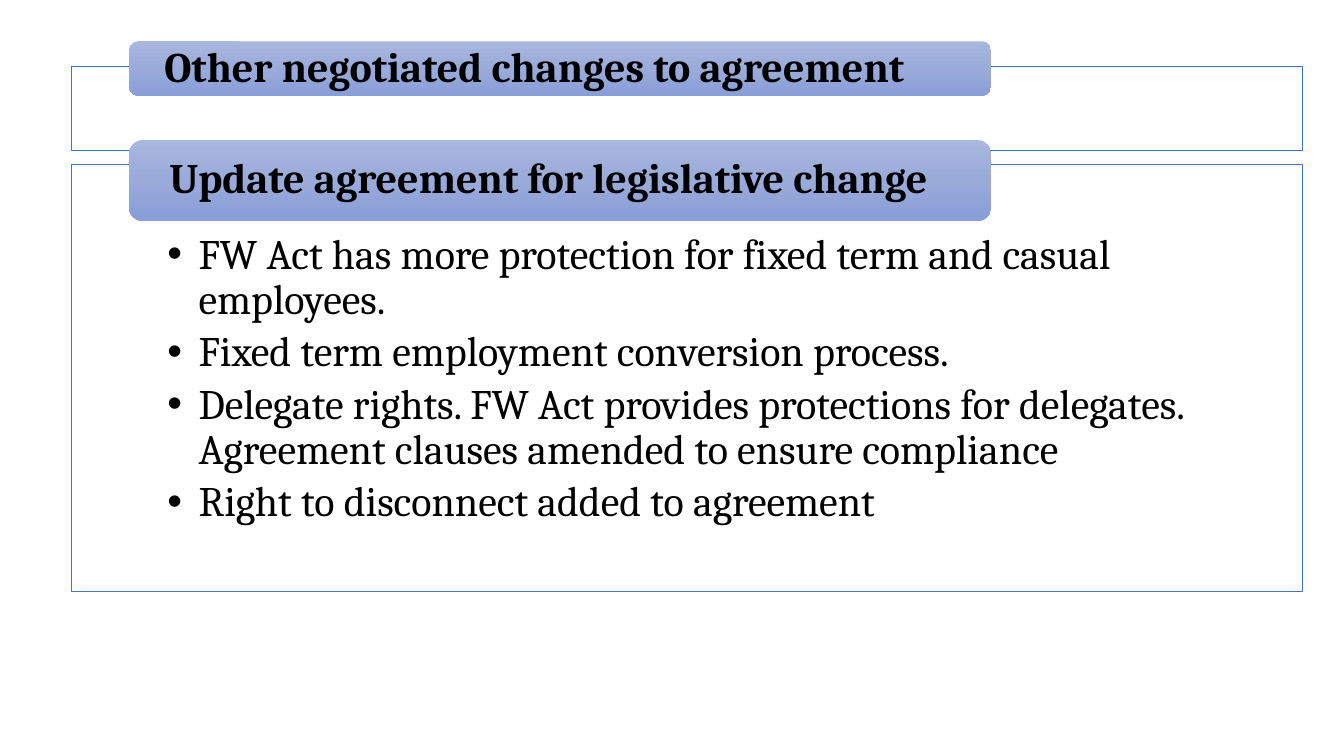
from copy import deepcopy
from dataclasses import dataclass

from pptx import Presentation
from pptx.dml.color import RGBColor
from pptx.enum.shapes import MSO_SHAPE
from pptx.enum.text import MSO_ANCHOR, MSO_AUTO_SIZE, PP_ALIGN
from pptx.oxml.ns import qn
from pptx.util import Inches, Pt

RECTANGLE = MSO_SHAPE.RECTANGLE
ROUNDED = MSO_SHAPE.ROUNDED_RECTANGLE
TOP, MIDDLE = MSO_ANCHOR.TOP, MSO_ANCHOR.MIDDLE
LEFT = PP_ALIGN.LEFT
NO_FIT = MSO_AUTO_SIZE.NONE

BAR_STOPS = [(0, "A8B7DF"), (0.5, "9AABD9"), (1, "889ED7")]
HANGING = 0.31


@dataclass
class Area:
    left: float
    top: float
    width: float
    height: float

    def lengths(self) -> list:
        return [Inches(n) for n in (self.left, self.top, self.width, self.height)]


@dataclass
class TextStyle:
    anchor: MSO_ANCHOR
    margins: tuple[float, float, float, float]
    bold: bool
    space_after: float
    bulleted: bool


TITLE_STYLE = TextStyle(MIDDLE, (0.32, 0, 0.32, 0), True, 0, False)
HEADING_STYLE = TextStyle(MIDDLE, (0.36, 0, 0.36, 0), True, 0, False)
LIST_STYLE = TextStyle(TOP, (0.95, 0.68, 0.95, 0.23), False, 5, True)

TITLE_FRAME = Area(0.71, 0.66, 12.21, 0.83)
TITLE_BAR = Area(1.28, 0.41, 8.55, 0.54)
TITLE_TEXT = Area(1.31, 0.44, 8.49, 0.48)
LIST_FRAME = Area(0.71, 1.63, 12.21, 4.24)
LIST_BAR = Area(1.28, 1.39, 8.55, 0.8)

TITLE = "Other negotiated changes to agreement"
HEADING = "Update agreement for legislative change"
CHANGES = [
    "FW Act has more protection for fixed term and casual employees.",
    "Fixed term employment conversion process.",
    "Delegate rights. FW Act provides protections for delegates. "
    "Agreement clauses amended to ensure compliance",
    "Right to disconnect added to agreement",
]


def color(value: str) -> RGBColor:
    return RGBColor.from_string(value)


def apply(target, values: dict) -> None:
    for name, value in values.items():
        setattr(target, name, value)


def place(shape, area: Area) -> None:
    apply(shape, dict(zip(("left", "top", "width", "height"), area.lengths())))


def style_frame(shape) -> None:
    shape.fill.solid()
    shape.fill.fore_color.rgb = color("FFFFFF")
    fill_color = shape.element.spPr.find(qn("a:solidFill"))[0]
    fill_color.append(fill_color.makeelement(qn("a:alpha"), {"val": "90000"}))
    shape.line.color.rgb = color("4472C4")
    shape.line.width = Pt(0.5)


def add_bar(page, area: Area):
    bar = page.shapes.add_shape(ROUNDED, *area.lengths())
    bar.shadow.inherit = False
    bar.line.fill.background()
    bar.fill.gradient()
    bar.fill.gradient_angle = 270
    stop_list = bar.element.spPr.find(".//" + qn("a:gsLst"))
    stop_list.insert(1, deepcopy(stop_list[0]))
    for stop, (position, value) in zip(bar.fill.gradient_stops, BAR_STOPS):
        stop.position = position
        stop.color.rgb = color(value)
    return bar


def add_bullet(para) -> None:
    properties = para._p.get_or_add_pPr()
    properties.set("marL", str(Inches(HANGING)))
    properties.set("indent", str(-Inches(HANGING)))
    properties.append(properties.makeelement(qn("a:buFont"), {"typeface": "Arial"}))
    properties.append(properties.makeelement(qn("a:buChar"), {"char": "•"}))


def write(shape, lines: list[str], style: TextStyle) -> None:
    box = shape.text_frame
    sides = ("margin_left", "margin_top", "margin_right", "margin_bottom")
    apply(box, {side: Inches(n) for side, n in zip(sides, style.margins)})
    apply(box, {"word_wrap": True, "auto_size": NO_FIT, "vertical_anchor": style.anchor})
    for index, line in enumerate(lines):
        para = box.add_paragraph() if index else box.paragraphs[0]
        if style.bulleted:
            add_bullet(para)
        apply(para, {"alignment": LEFT, "line_spacing": 0.9,
                     "space_before": Pt(0), "space_after": Pt(style.space_after)})
        span = para.add_run()
        span.text = line
        apply(span.font, {"name": "Cambria", "size": Pt(30), "bold": style.bold})
        span.font.color.rgb = color("000000")


def main() -> None:
    deck = Presentation()
    deck.slide_width, deck.slide_height = Inches(13.33), Inches(7.5)
    page = deck.slides.add_slide(deck.slide_layouts[1])
    title, body = page.placeholders

    frame = page.shapes.add_shape(RECTANGLE, *TITLE_FRAME.lengths())
    frame.shadow.inherit = False
    style_frame(frame)
    add_bar(page, TITLE_BAR)

    place(title, TITLE_TEXT)
    write(title, [TITLE], TITLE_STYLE)
    place(body, LIST_FRAME)
    style_frame(body)
    write(body, CHANGES, LIST_STYLE)
    for placeholder in (title, body):
        placeholder.element.getparent().append(placeholder.element)

    write(add_bar(page, LIST_BAR), [HEADING], HEADING_STYLE)
    deck.save("out.pptx")


if __name__ == "__main__":
    main()
